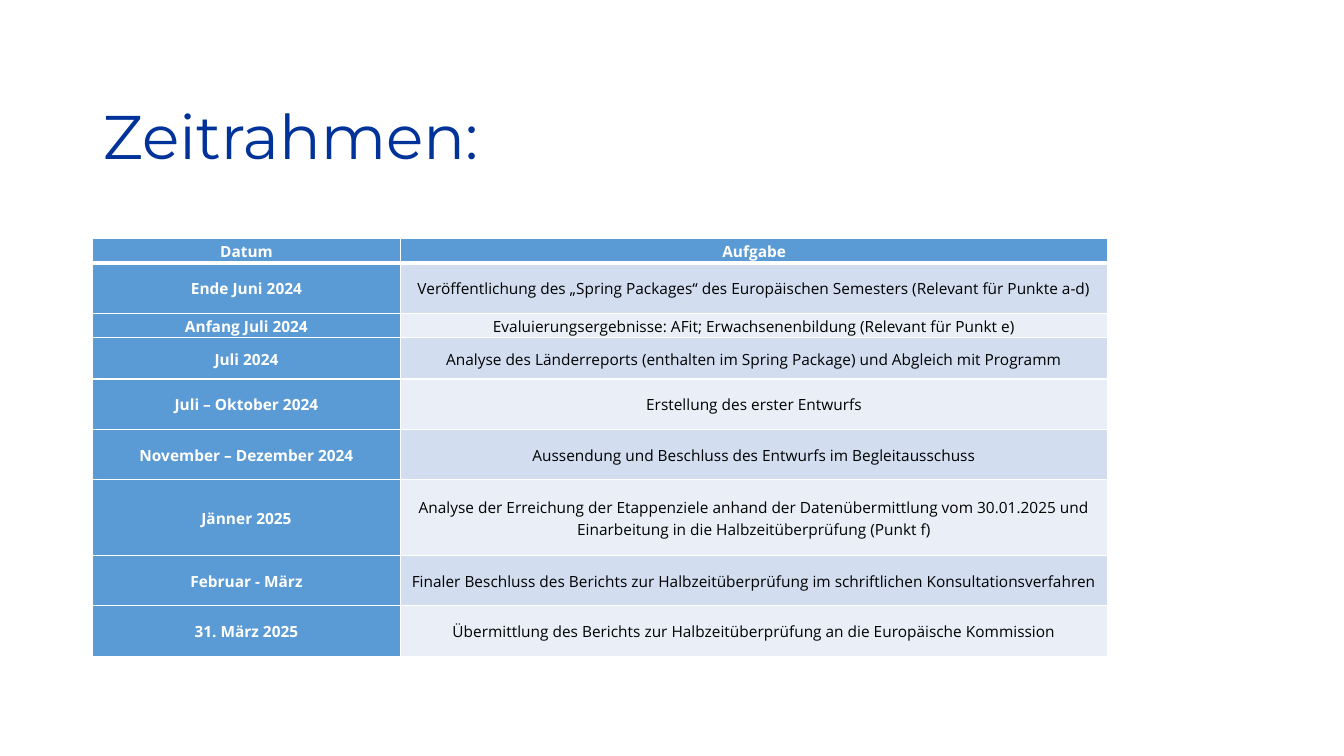
"""Build the timeline slide with its table of dates and tasks."""
import lxml.etree
import pptx
import pptx.dml.color
import pptx.enum.text
import pptx.oxml.ns
import pptx.util

PX = 9144
NAVY = pptx.dml.color.RGBColor(0x00, 0x33, 0x99)
BLUE = pptx.dml.color.RGBColor(0x5B, 0x9B, 0xD5)
BAND_DARK = pptx.dml.color.RGBColor(0xD2, 0xDE, 0xEF)
BAND_LIGHT = pptx.dml.color.RGBColor(0xEA, 0xEF, 0xF7)
WHITE = pptx.dml.color.RGBColor(0xFF, 0xFF, 0xFF)
BLACK = pptx.dml.color.RGBColor(0x00, 0x00, 0x00)
MIDDLE = pptx.enum.text.MSO_ANCHOR.MIDDLE
LEFT = pptx.enum.text.PP_ALIGN.LEFT
CENTER = pptx.enum.text.PP_ALIGN.CENTER

COLUMN_WIDTHS = (305, 702)
SCHEDULE = (
    (24, "Datum", "Aufgabe"),
    (50, "Ende Juni 2024",
     "Veröffentlichung des „Spring Packages“ des Europäischen Semesters (Relevant für Punkte a-d)"),
    (24, "Anfang Juli 2024",
     "Evaluierungsergebnisse: AFit; Erwachsenenbildung (Relevant für Punkt e)"),
    (41, "Juli 2024",
     "Analyse des Länderreports (enthalten im Spring Package) und Abgleich mit Programm"),
    (50, "Juli – Oktober 2024", "Erstellung des erster Entwurfs"),
    (50, "November – Dezember 2024",
     "Aussendung und Beschluss des Entwurfs im Begleitausschuss"),
    (75, "Jänner 2025",
     "Analyse der Erreichung der Etappenziele anhand der Datenübermittlung vom 30.01.2025 "
     "und Einarbeitung in die Halbzeitüberprüfung (Punkt f)"),
    (50, "Februar - März",
     "Finaler Beschluss des Berichts zur Halbzeitüberprüfung im schriftlichen Konsultationsverfahren"),
    (50, "31. März 2025",
     "Übermittlung des Berichts zur Halbzeitüberprüfung an die Europäische Kommission"),
)


def px(length):
    """Turn px into EMU."""
    return pptx.util.Emu(length * PX)


def style_paragraph(paragraph, font_name, size, color, align, spacing, bold=False):
    """Set the font, alignment and line spacing of a paragraph."""
    paragraph.alignment = align
    paragraph.line_spacing = spacing
    paragraph.font.name = font_name
    paragraph.font.size = pptx.util.Pt(size)
    paragraph.font.color.rgb = color
    paragraph.font.bold = bold


def set_title(page, text):
    """Place and format the slide title."""
    title = page.shapes.title
    title.left, title.top, title.width, title.height = map(px, (92, 66, 1150, 145))
    frame = title.text_frame
    frame.text = text
    frame.vertical_anchor = MIDDLE
    style_paragraph(frame.paragraphs[0], "Montserrat", 44, NAVY, LEFT, 0.9)


def set_borders(cell, top, bottom):
    """Give a cell white borders, with top and bottom widths in points."""
    properties = cell._tc.get_or_add_tcPr()
    widths = (("lnL", 1), ("lnR", 1), ("lnT", top), ("lnB", bottom))
    for position, (tag, width) in enumerate(widths):
        line = lxml.etree.Element(pptx.oxml.ns.qn(f"a:{tag}"), w=str(pptx.util.Pt(width)))
        fill = lxml.etree.SubElement(line, pptx.oxml.ns.qn("a:solidFill"))
        lxml.etree.SubElement(fill, pptx.oxml.ns.qn("a:srgbClr"), val=str(WHITE))
        properties.insert(position, line)


def fill_cell(cell, text, fill, color, bold):
    """Write a cell's text and set its look."""
    cell.text = text
    cell.vertical_anchor = MIDDLE
    cell.margin_left = cell.margin_right = px(7)
    cell.margin_top = cell.margin_bottom = 0
    cell.fill.solid()
    cell.fill.fore_color.rgb = fill
    style_paragraph(cell.text_frame.paragraphs[0], "Open Sans", 11, color, CENTER, 1.07, bold)


def add_schedule(page):
    """Add the table of dates and tasks."""
    heights = [height for height, *_ in SCHEDULE]
    table = page.shapes.add_table(
        len(SCHEDULE), len(COLUMN_WIDTHS),
        px(92), px(237), px(sum(COLUMN_WIDTHS)), px(sum(heights))).table
    for column, width in zip(table.columns, COLUMN_WIDTHS):
        column.width = px(width)
    for row_number, (height, *texts) in enumerate(SCHEDULE):
        table.rows[row_number].height = px(height)
        band = BAND_DARK if row_number % 2 else BAND_LIGHT
        for column_number, text in enumerate(texts):
            cell = table.cell(row_number, column_number)
            heading = row_number == 0 or column_number == 0
            fill_cell(cell, text, BLUE if heading else band, WHITE if heading else BLACK, heading)
            set_borders(cell, 3 if row_number == 1 else 1, 3 if row_number == 0 else 1)


def main():
    """Build and save the deck."""
    deck = pptx.Presentation()
    deck.slide_width, deck.slide_height = px(1333), px(750)
    page = deck.slides.add_slide(deck.slide_layouts[5])
    set_title(page, "Zeitrahmen:")
    add_schedule(page)
    deck.save("out.pptx")


if __name__ == "__main__":
    main()
